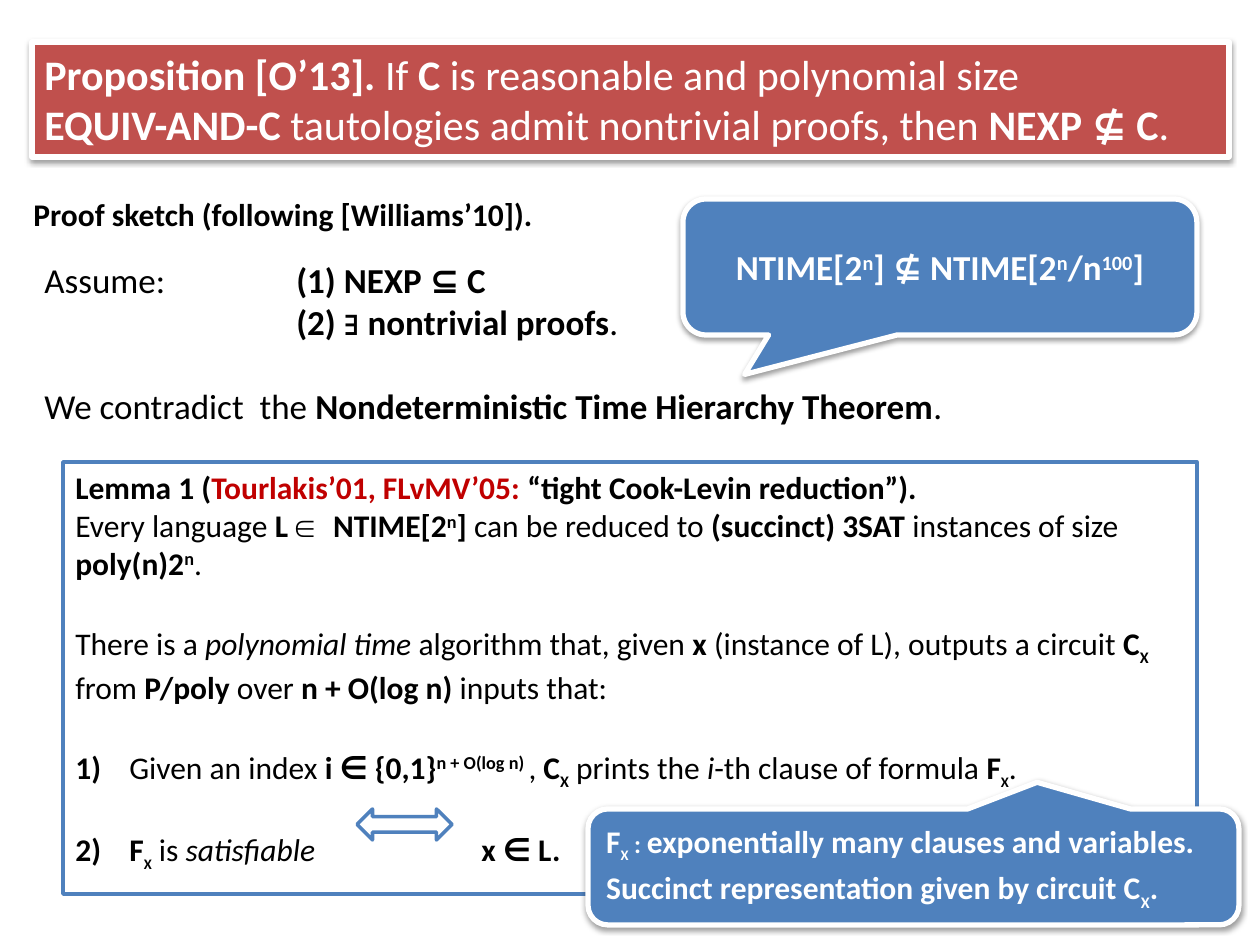
from lxml import etree
from pptx import Presentation
from pptx.dml.color import RGBColor
from pptx.enum.shapes import MSO_SHAPE
from pptx.enum.text import MSO_ANCHOR, PP_ALIGN
from pptx.oxml.ns import qn
from pptx.util import Emu, Pt

RECT = MSO_SHAPE.RECTANGLE
CALLOUT = MSO_SHAPE.ROUNDED_RECTANGULAR_CALLOUT
DOUBLE_ARROW = MSO_SHAPE.LEFT_RIGHT_ARROW
TOP, MIDDLE = MSO_ANCHOR.TOP, MSO_ANCHOR.MIDDLE
LEFT, CENTER = PP_ALIGN.LEFT, PP_ALIGN.CENTER

PX_PER_INCH = 126
COLORS = {"black": "000000", "white": "FFFFFF", "red": "C0504D",
          "blue": "4F81BD", "citation": "C00000"}
FONTS = {"t": "Times New Roman", "m": "Courier New"}
BASELINES = {"^": "30000", "_": "-25000"}


def px(n):
    return Emu(round(n * 914400 / PX_PER_INCH))


def rgb(name):
    return RGBColor.from_string(COLORS[name])


def add_run(p, text, style, size, color):
    """Style letters: b bold, i italic, ^ superscript, _ subscript,
    k small caps, L 20 pt, c citation colour, t Times, m Courier."""
    r = p.add_run()
    r.text = text
    font = r.font
    font.name = next((FONTS[s] for s in style if s in FONTS), "Calibri")
    font.size = Pt(20 if "L" in style else size)
    font.bold = "b" in style
    font.italic = "i" in style
    font.color.rgb = rgb("citation" if "c" in style else color)
    rPr = r._r.get_or_add_rPr()
    for mark, baseline in BASELINES.items():
        if mark in style:
            rPr.set("baseline", baseline)
    if "k" in style:
        rPr.set("cap", "small")


def set_tabs(p, stops):
    tab_list = etree.SubElement(p._p.get_or_add_pPr(), qn("a:tabLst"))
    for stop in stops:
        etree.SubElement(tab_list, qn("a:tab"), pos=str(px(stop)), algn="l")


def fill_text(sp, paragraphs, size, color="black", anchor=TOP, align=LEFT,
              gaps=None, tabs=()):
    """Write paragraphs of (text, style) runs; gaps maps index to space before."""
    tf = sp.text_frame
    tf.word_wrap = True
    tf.vertical_anchor = anchor
    for i, runs in enumerate(paragraphs):
        p = tf.paragraphs[0] if i == 0 else tf.add_paragraph()
        p.alignment = align
        if gaps and i in gaps:
            p.space_before = Pt(gaps[i])
        if tabs:
            set_tabs(p, tabs)
        for text, style in runs:
            add_run(p, text, style, size, color)


def add_text(s, box, paragraphs, size, **options):
    fill_text(s.shapes.add_textbox(*map(px, box)), paragraphs, size, **options)


def add_shape(s, kind, box, fill, line, width, adjustments=()):
    sp = s.shapes.add_shape(kind, *map(px, box))
    sp.shadow.inherit = False
    sp.fill.solid()
    sp.fill.fore_color.rgb = rgb(fill)
    sp.line.color.rgb = rgb(line)
    sp.line.width = Pt(width)
    for i, value in enumerate(adjustments):
        sp.adjustments[i] = value
    return sp


def add_raised(s, kind, box, fill, adjustments=()):
    """Add a shape with a white border and a soft shadow below it."""
    sp = add_shape(s, kind, box, fill, "white", 3, adjustments)
    effects = sp._element.spPr.find(qn("a:effectLst"))
    shadow = etree.SubElement(effects, qn("a:outerShdw"), blurRad=str(Pt(3.1)),
                              dist=str(Pt(1.6)), dir="5400000", rotWithShape="0")
    color = etree.SubElement(shadow, qn("a:srgbClr"), val=COLORS["black"])
    etree.SubElement(color, qn("a:alpha"), val="38000")
    return sp


def add_proposition(s):
    sp = add_raised(s, RECT, (32, 42, 1197, 115), "red")
    fill_text(sp, [
        [("Proposition [O’13]. ", "b"), ("If ", ""), ("C", "b"),
         (" is reasonable and polynomial size", "")],
        [("EQUIV-AND-C", "b"), (" tautologies admit nontrivial proofs, then ", ""),
         ("NEXP ⊈ C", "b"), (".", "")],
    ], 24, "white")


def add_proof_sketch(s):
    add_text(s, (21, 189, 672, 50),
             [[("Proof sketch (following [Williams’10]).", "b")]], 18)
    add_text(s, (32, 252, 1197, 183), [
        [("Assume:\t", ""), ("(1) NEXP ⊆ C", "b")],
        [("\t(2) ", "b"), ("∃ ", "bt"), ("nontrivial proofs", "b"), (".", "")],
        [("We contradict  the ", ""),
         ("Nondeterministic Time Hierarchy Theorem", "b"), (".", "")],
    ], 20, gaps={2: 24}, tabs=[252])


def add_lemma(s):
    sp = add_shape(s, RECT, (63, 462, 1134, 432), "white", "blue", 2)
    fill_text(sp, [
        [("Lemma 1 (", "b"), ("Tourlakis’01, FLvMV’05: ", "bc"),
         ("“tight Cook-Levin reduction”).", "b")],
        [("Every language ", ""), ("L ", "b"), ("∈ ", "bm"), ("NTIME[2", "b"),
         ("n", "b^"), ("] ", "b"), ("can be reduced to ", ""),
         ("(succinct) 3SAT ", "b"), ("instances of size ", ""),
         ("poly(n)2", "b"), ("n", "b^"), (".", "")],
        [("There is a ", ""), ("polynomial time", "i"),
         (" algorithm that, given ", ""), ("x", "b"),
         (" (instance of L), outputs a circuit ", ""), ("C", "b"),
         ("x", "b_kL"), (" from ", ""), ("P/poly", "b"), (" over ", ""),
         ("n + O(log n)", "b"), (" inputs that:", "")],
        [("1)\t", "b"), ("Given an index ", ""), ("i ∈ {0,1}", "b"),
         ("n + O(log n) ", "b^"), (", ", ""), ("C", "b"), ("x", "b_kL"),
         (" prints the ", ""), ("i", "i"), ("-th clause of formula ", ""),
         ("F", "b"), ("x", "b_k"), (".", "")],
        [("2)\tF", "b"), ("x", "b_k"), (" is ", ""), ("satisfiable\t", "i"),
         ("x ∈ L.", "b")],
    ], 18, gaps={2: 22, 3: 22, 4: 22}, tabs=[54, 406])
    add_shape(s, DOUBLE_ARROW, (357, 809, 95, 31), "white", "blue", 2)


def add_callouts(s):
    hierarchy = add_raised(s, CALLOUT, (683, 199, 514, 136), "blue",
                           (-0.38, 0.79, 0.17))
    fill_text(hierarchy, [
        [("NTIME[2", "b"), ("n", "b^"), ("] ⊈ NTIME[2", "b"), ("n", "b^"),
         ("/n", "b"), ("100", "b^"), ("]", "b")],
    ], 20, "white", MIDDLE, CENTER)
    formula = add_raised(s, CALLOUT, (588, 809, 651, 116), "blue",
                         (0.19, -0.73, 0.17))
    fill_text(formula, [
        [("F", "b"), ("x", "b_k"), (" : ", "bk"),
         ("exponentially many clauses and variables.", "b")],
        [("Succinct representation given by circuit C", "b"), ("x", "b_kL"),
         (".", "b")],
    ], 18, "white", MIDDLE)


def main():
    prs = Presentation()
    prs.slide_width, prs.slide_height = px(1260), px(945)
    s = prs.slides.add_slide(prs.slide_layouts[6])
    add_proposition(s)
    add_proof_sketch(s)
    add_lemma(s)
    add_callouts(s)
    prs.save("out.pptx")


if __name__ == "__main__":
    main()
